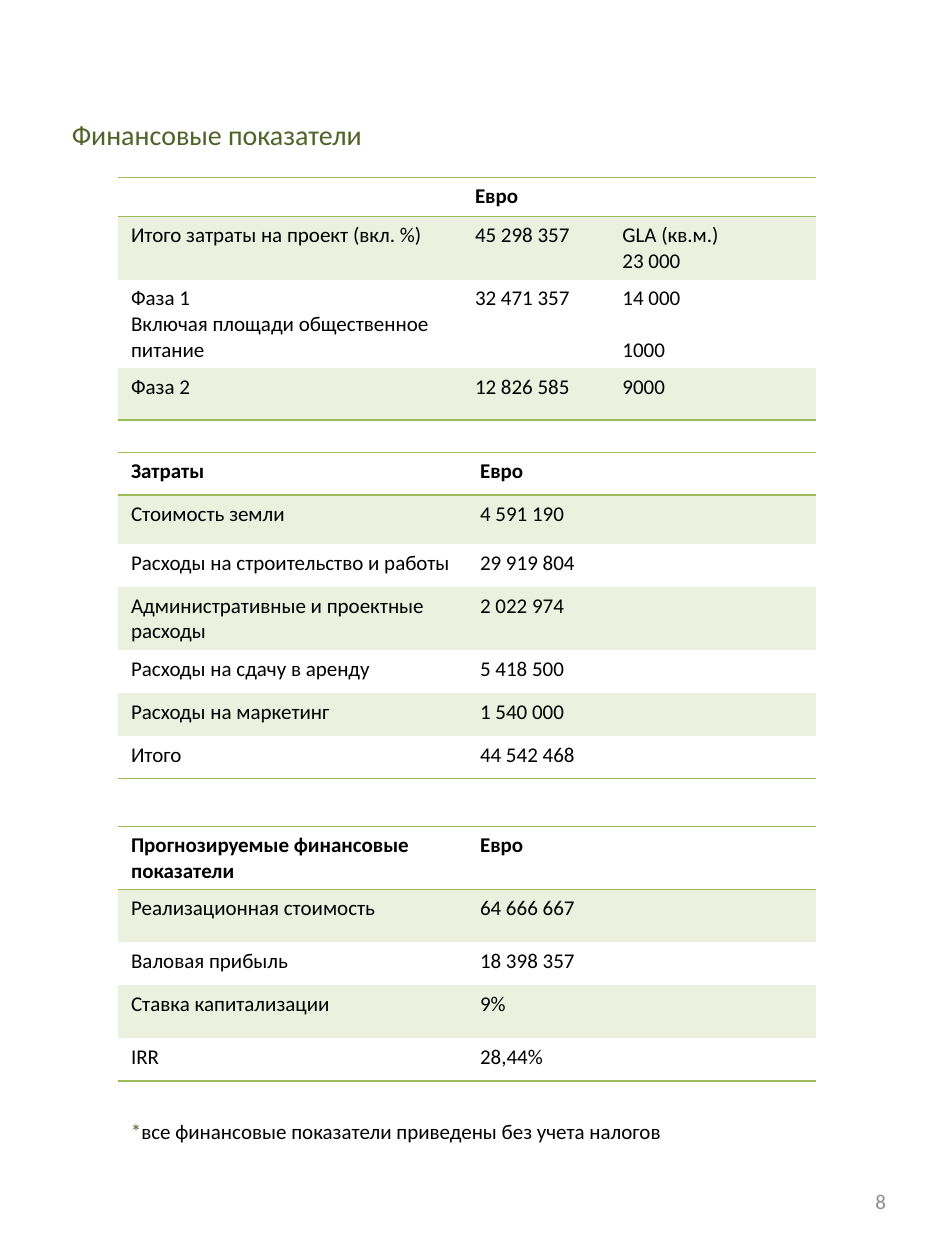
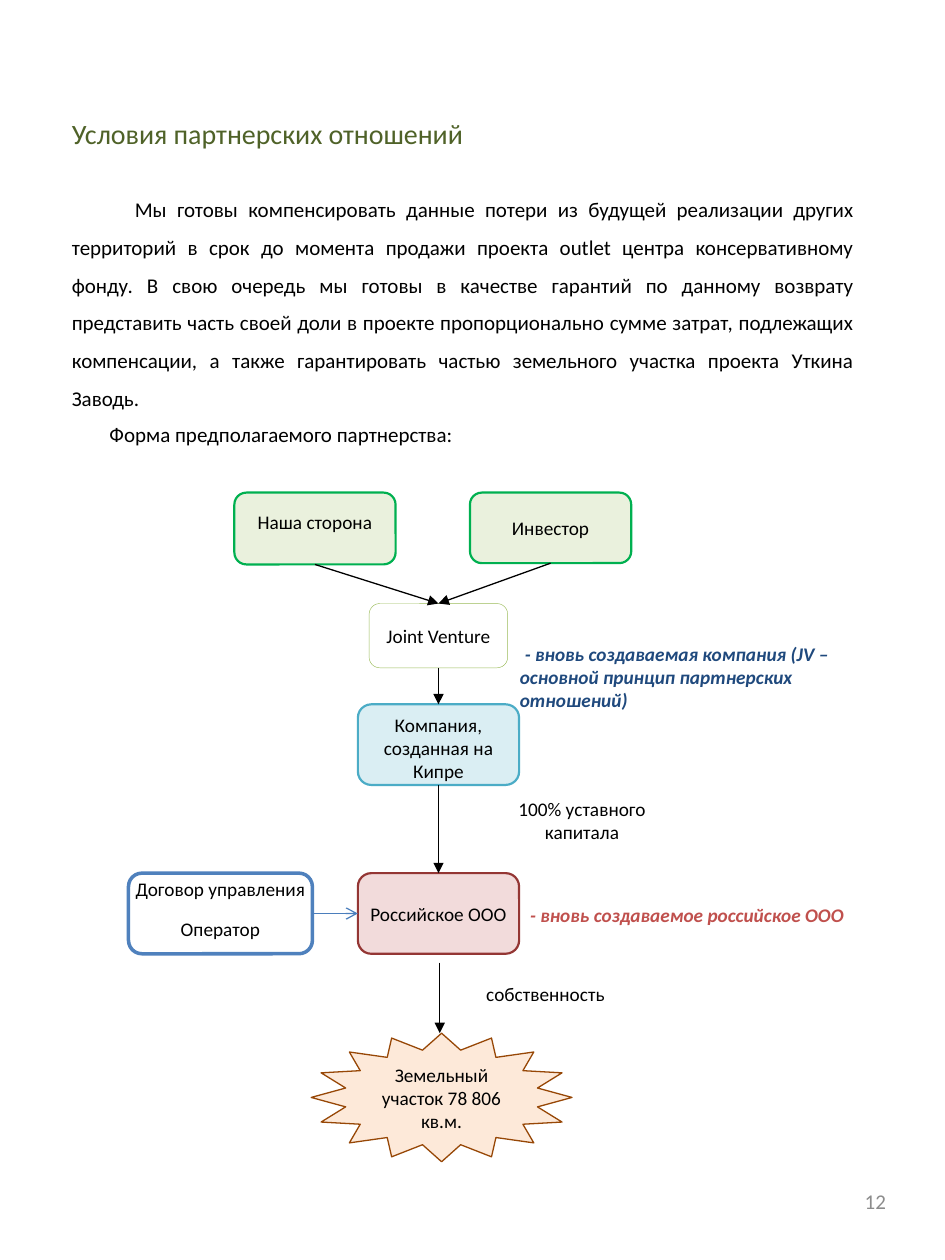
from lxml import etree
from pptx import Presentation
from pptx.dml.color import RGBColor
from pptx.enum.shapes import MSO_CONNECTOR, MSO_SHAPE
from pptx.enum.text import MSO_ANCHOR, MSO_AUTO_SIZE, PP_ALIGN
from pptx.oxml.ns import qn
from pptx.util import Inches, Pt

LEFT, CENTER, RIGHT, JUSTIFY = PP_ALIGN.LEFT, PP_ALIGN.CENTER, PP_ALIGN.RIGHT, PP_ALIGN.JUSTIFY
TOP, MIDDLE = MSO_ANCHOR.TOP, MSO_ANCHOR.MIDDLE
ROUNDED, STAR = MSO_SHAPE.ROUNDED_RECTANGLE, MSO_SHAPE.STAR_16_POINT
STRAIGHT = MSO_CONNECTOR.STRAIGHT
NO_FIT = MSO_AUTO_SIZE.NONE

FONT = "Calibri"
BLACK, WHITE, GREY = "000000", "FFFFFF", "8C8C8C"
OLIVE, GREEN, PALE_GREEN = "4F6228", "9BBB59", "EBF1DE"
NAVY, RED, ARROW_BLUE = "1F497D", "C0504D", "4B7EBC"
PLAIN_TABLE = "{2D5ABB26-0587-4C30-8999-92F81FD0307C}"
TITLE_ONLY, TITLE_AND_BODY = 5, 1
BOTTOM_SITE, TOP_SITE, LEFT_SITE, RIGHT_SITE = 2, 0, 1, 3

TABLE_LEFT = 0.94
TABLES = [
    {
        "top": 1.41,
        "columns": [2.73, 1.17, 1.64],
        "heights": [0.31, 0.41, 0.41, 0.41],
        "rows": [
            ["", "Евро", ""],
            ["Итого затраты на проект (вкл. %)", "45 298 357", "GLA (кв.м.)\n23 000"],
            ["Фаза 1\nВключая площади общественное питание", "32 471 357", "14 000\n1000"],
            ["Фаза 2", "12 826 585", "9000"],
        ],
    },
    {
        "top": 3.59,
        "columns": [2.77, 2.77],
        "heights": [0.34, 0.39, 0.34, 0.34, 0.34, 0.34, 0.34],
        "rows": [
            ["Затраты", "Евро"],
            ["Стоимость земли", "4 591 190"],
            ["Расходы на строительство и работы", "29 919 804"],
            ["Административные и проектные расходы", "2 022 974"],
            ["Расходы на сдачу в аренду", "5 418 500"],
            ["Расходы на маркетинг", "1 540 000"],
            ["Итого", "44 542 468"],
        ],
    },
    {
        "top": 6.56,
        "columns": [2.77, 2.77],
        "heights": [0.42, 0.42, 0.34, 0.42, 0.34],
        "rows": [
            ["Прогнозируемые финансовые показатели", "Евро"],
            ["Реализационная стоимость", "64 666 667"],
            ["Валовая прибыль", "18 398 357"],
            ["Ставка капитализации", "9%"],
            ["IRR", "28,44%"],
        ],
    },
]
FOOTNOTE = [("*", OLIVE), ("все финансовые показатели приведены без учета налогов", BLACK)]

TERMS = (
    "Мы готовы компенсировать данные потери из будущей реализации других территорий "
    "в срок до момента продажи проекта outlet центра консервативному фонду. "
    "В свою очередь мы готовы в качестве гарантий по данному возврату представить "
    "часть своей доли в проекте пропорционально сумме затрат, подлежащих компенсации, "
    "а также гарантировать частью земельного участка проекта Уткина Заводь."
)
FORM_LABEL = "Форма предполагаемого партнерства:"

SIDE, TIGHT = (0.02, 0.04, 0.02, 0.04), (0, 0, 0, 0)
NODES = {
    "our_side": ("Наша сторона", (1.86, 3.91, 1.28, 0.57), ROUNDED, "EAF1DD", "00B050", 1.25, MIDDLE, (0.02, 0.04, 0.02, 0.14)),
    "investor": ("Инвестор", (3.73, 3.91, 1.28, 0.56), ROUNDED, "EAF1DD", "00B050", 1.25, MIDDLE, SIDE),
    "cyprus": ("Компания, созданная на Кипре", (2.84, 5.59, 1.28, 0.64), ROUNDED, "DAEEF3", "4BACC6", 1.25, TOP, SIDE),
    "russian": ("Российское ООО", (2.84, 6.93, 1.28, 0.64), ROUNDED, "F2DBDB", "943634", 1.25, MIDDLE, SIDE),
    "capital": ("100% уставного капитала", (4.07, 6.3, 1.1, 0.51), ROUNDED, WHITE, WHITE, 1.25, TOP, TIGHT),
    "land": ("Земельный участок 78\u00a0806 кв.м.".replace("\u00a0", " "), (2.47, 8.2, 2.07, 1.02), STAR, "FDE9D9", "974706", 0.75, TOP, TIGHT),
    "property": ("собственность", (3.78, 7.78, 1.1, 0.37), ROUNDED, WHITE, WHITE, 1.25, TOP, TIGHT),
    "management": ("Договор управления\nОператор", (1.02, 6.93, 1.46, 0.64), ROUNDED, WHITE, "4F81BD", 2, TOP, TIGHT),
    "venture": ("Joint Venture", (2.93, 4.79, 1.1, 0.51), ROUNDED, WHITE, GREEN, 0.25, MIDDLE, TIGHT),
}
NOTES = [
    ("- вновь создаваемая компания (JV – основной принцип партнерских отношений)", (4.09, 5.06, 3.04, 0.73), NAVY),
    ("- вновь создаваемое российское ООО", (4.15, 7.15, 3.04, 0.35), RED),
]
LINKS = [
    ("our_side", BOTTOM_SITE, "venture", TOP_SITE, BLACK, "triangle"),
    ("investor", BOTTOM_SITE, "venture", TOP_SITE, BLACK, "triangle"),
    ("venture", BOTTOM_SITE, "cyprus", TOP_SITE, BLACK, "triangle"),
    ("cyprus", BOTTOM_SITE, "russian", TOP_SITE, BLACK, "triangle"),
    ("management", RIGHT_SITE, "russian", LEFT_SITE, ARROW_BLUE, "arrow"),
]
LAND_ARROW = (3.49, 7.64, 3.49, 8.2)


def rgb(value):
    return RGBColor.from_string(value)


def style(para, size, color=BLACK, align=LEFT, bold=False, italic=False):
    para.alignment = align
    font = para.font
    font.name, font.size, font.bold, font.italic = FONT, Pt(size), bold, italic
    font.color.rgb = rgb(color)


def indent(para, first_line):
    properties = para._p.get_or_add_pPr()
    properties.set("marL", "0")
    properties.set("indent", str(Inches(first_line)))


def place(shape, area):
    shape.left, shape.top, shape.width, shape.height = map(Inches, area)


def add_text(page, text, area):
    box = page.shapes.add_textbox(*map(Inches, area))
    frame = box.text_frame
    frame.word_wrap = True
    frame.text = text
    return frame


def add_page(deck, layout, title, title_area, number):
    page = deck.slides.add_slide(deck.slide_layouts[layout])
    place(page.shapes.title, title_area)
    frame = page.shapes.title.text_frame
    frame.text, frame.auto_size, frame.vertical_anchor = title, NO_FIT, MIDDLE
    style(frame.paragraphs[0], 16, OLIVE)
    footer = add_text(page, number, (5.38, 9.27, 1.75, 0.53))
    footer.vertical_anchor = MIDDLE
    style(footer.paragraphs[0], 12, GREY, RIGHT)
    return page


def add_border(cell, side):
    line = etree.Element(qn(f"a:{side}"), w=str(Pt(1)))
    fill = etree.SubElement(line, qn("a:solidFill"))
    etree.SubElement(fill, qn("a:srgbClr"), val=GREEN)
    cell._tc.get_or_add_tcPr().insert(0, line)


def add_finance_table(page, top, columns, heights, rows):
    area = (TABLE_LEFT, top, sum(columns), sum(heights))
    table = page.shapes.add_table(len(rows), len(columns), *map(Inches, area)).table
    table._tbl.tblPr.find(qn("a:tableStyleId")).text = PLAIN_TABLE
    for column, width in zip(table.columns, columns):
        column.width = Inches(width)
    for index, (row, height, texts) in enumerate(zip(table.rows, heights, rows)):
        row.height = Inches(height)
        for cell, text in zip(row.cells, texts):
            cell.text = text
            for para in cell.text_frame.paragraphs:
                style(para, 12, bold=index == 0)
            if index % 2:
                cell.fill.solid()
                cell.fill.fore_color.rgb = rgb(PALE_GREEN)
            else:
                cell.fill.background()
            if index in (0, len(rows) - 1):
                add_border(cell, "lnB")
            if index == 0:
                add_border(cell, "lnT")
    return table


def add_node(page, text, area, kind, fill, line, weight, anchor, insets):
    node = page.shapes.add_shape(kind, *map(Inches, area))
    node.shadow.inherit = False
    if fill:
        node.fill.solid()
        node.fill.fore_color.rgb = rgb(fill)
        node.line.color.rgb = rgb(line)
        node.line.width = Pt(weight)
    else:
        node.fill.background()
        node.line.fill.background()
    frame = node.text_frame
    frame.word_wrap, frame.vertical_anchor = True, anchor
    frame.margin_left, frame.margin_top, frame.margin_right, frame.margin_bottom = map(Inches, insets)
    frame.text = text
    for para in frame.paragraphs:
        para.space_after = Pt(10)
        style(para, 11, align=CENTER)
    return node


def add_arrow(page, color, head, ends=(0, 0, 0, 0)):
    arrow = page.shapes.add_connector(STRAIGHT, *map(Inches, ends))
    arrow.line.color.rgb = rgb(color)
    arrow.line.width = Pt(0.75)
    etree.SubElement(arrow.line._get_or_add_ln(), qn("a:tailEnd"), type=head)
    etree.SubElement(arrow._element.spPr, qn("a:effectLst"))
    return arrow


def build_finance(deck):
    page = add_page(deck, TITLE_ONLY, "Финансовые показатели", (0.47, 0.23, 6.75, 1.67), "8")
    tables = [add_finance_table(page, **content) for content in TABLES]
    catering_area = tables[0].cell(2, 2).text_frame.paragraphs[1]
    catering_area.space_before = Pt(14.6)
    frame = add_text(page, "", (0.94, 8.83, 4.46, 0.3))
    frame.word_wrap = False
    para = frame.paragraphs[0]
    style(para, 12)
    for text, color in FOOTNOTE:
        span = para.add_run()
        span.text = text
        span.font.color.rgb = rgb(color)


def build_partnership(deck):
    page = add_page(deck, TITLE_AND_BODY, "Условия партнерских отношений", (0.47, 0.4, 6.66, 1.32), "12")
    body = page.placeholders[1]
    place(body, (0.47, 1.41, 6.41, 1.95))
    body.text_frame.text = TERMS
    body.text_frame.auto_size = NO_FIT
    terms = body.text_frame.paragraphs[0]
    etree.SubElement(terms._p.get_or_add_pPr(), qn("a:buNone"))
    label = add_text(page, FORM_LABEL, (0.39, 3.2, 6.75, 0.64)).paragraphs[0]
    for para, first_line, align in ((terms, 0.5, JUSTIFY), (label, 0.38, LEFT)):
        indent(para, first_line)
        para.line_spacing = 1.5
        para.space_before = Pt(0)
        style(para, 12, align=align)

    nodes = {name: add_node(page, *content) for name, content in NODES.items()}
    for text, area, color in NOTES:
        note = add_node(page, text, area, ROUNDED, None, None, 0, TOP, TIGHT)
        para = note.text_frame.paragraphs[0]
        indent(para, 0.04)
        style(para, 11, color, bold=True, italic=True)
    for source, source_site, target, target_site, color, head in LINKS:
        arrow = add_arrow(page, color, head)
        arrow.begin_connect(nodes[source], source_site)
        arrow.end_connect(nodes[target], target_site)
    add_arrow(page, BLACK, "triangle", LAND_ARROW)


def main():
    deck = Presentation()
    deck.slide_width, deck.slide_height = Inches(7.5), Inches(10)
    build_finance(deck)
    build_partnership(deck)
    deck.save("out.pptx")


if __name__ == "__main__":
    main()
